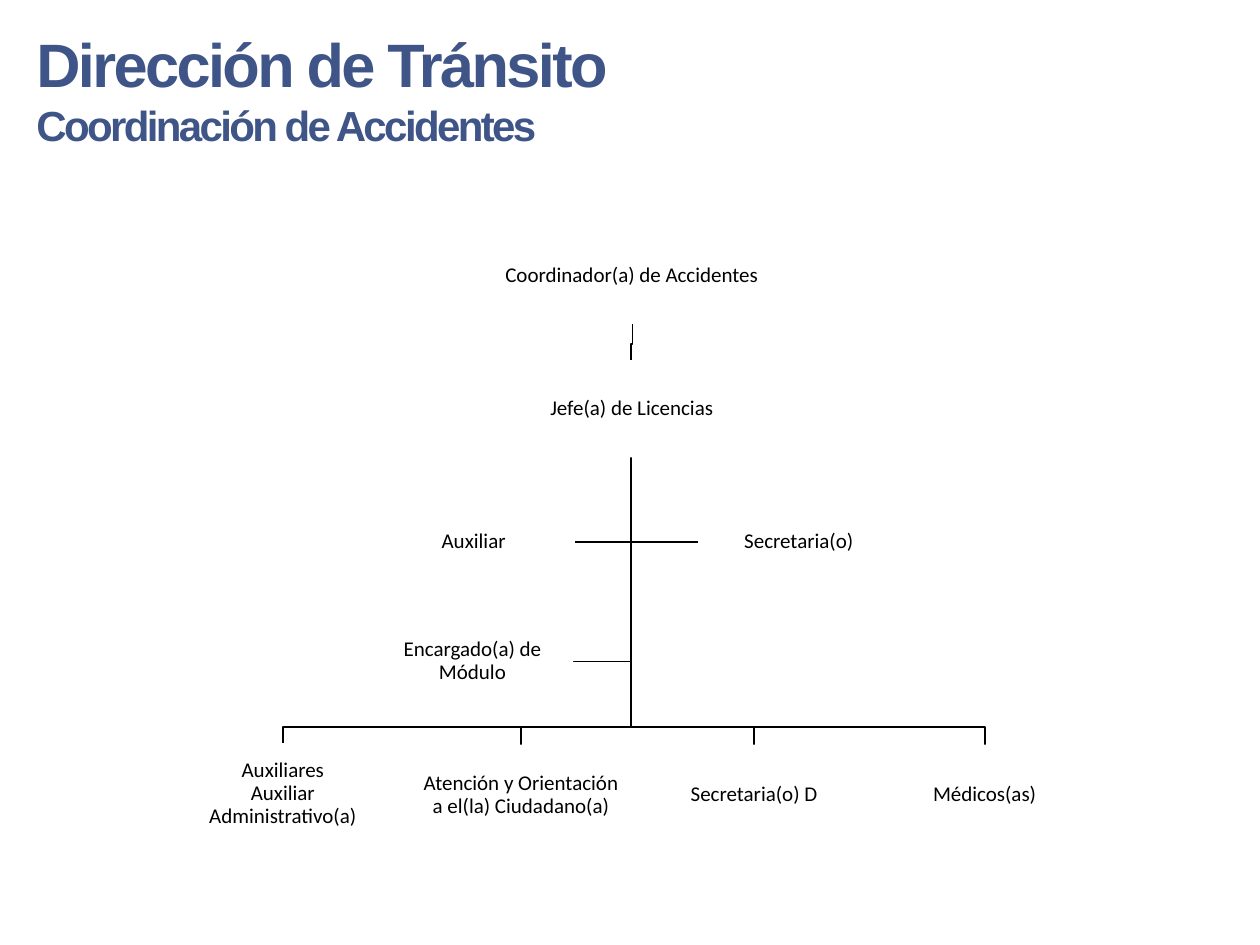
from pptx import Presentation
from pptx.dml.color import RGBColor
from pptx.enum.shapes import MSO_SHAPE
from pptx.enum.text import MSO_ANCHOR, MSO_AUTO_SIZE, PP_ALIGN
from pptx.util import Inches, Pt

RECTANGLE = MSO_SHAPE.RECTANGLE
MIDDLE = MSO_ANCHOR.MIDDLE
GROW = MSO_AUTO_SIZE.SHAPE_TO_FIT_TEXT
CENTER = PP_ALIGN.CENTER

BLUE = RGBColor(0x3F, 0x55, 0x88)
BLACK = RGBColor(0, 0, 0)
WHITE = RGBColor(0xFF, 0xFF, 0xFF)

COLUMNS, ROWS = 100, 75
TRUNK = 50.1
BRANCH_ROW = 57.7


class OrgChart:
    heading_font = "Arial"
    body_font = "Calibri"
    body_size = 12
    inset = Inches(0.01)

    def __init__(self, presentation):
        self.slide = presentation.slides.add_slide(presentation.slide_layouts[6])
        self.column = presentation.slide_width / COLUMNS
        self.row = presentation.slide_height / ROWS

    def place(self, column, row):
        return round(column * self.column), round(row * self.row)

    def heading(self, left, top, width, height, lines):
        box = self.slide.shapes.add_textbox(*self.place(left, top), *self.place(width, height))
        frame = box.text_frame
        frame.word_wrap = True
        frame.auto_size = GROW
        frame.text = "\n".join(text for text, size in lines)
        for paragraph, (text, size) in zip(frame.paragraphs, lines):
            run = paragraph.runs[0]
            run.font.name = self.heading_font
            run.font.size = Pt(size)
            run.font.bold = True
            run.font.color.rgb = BLUE
            run.font._element.set("spc", "-150")

    def position(self, left, top, width, height, text):
        box = self.slide.shapes.add_shape(
            RECTANGLE, *self.place(left, top), *self.place(width, height))
        box.shadow.inherit = False
        box.fill.solid()
        box.fill.fore_color.rgb = WHITE
        box.line.fill.background()
        frame = box.text_frame
        frame.word_wrap = True
        frame.vertical_anchor = MIDDLE
        frame.margin_left = frame.margin_right = self.inset
        frame.margin_top = frame.margin_bottom = self.inset
        frame.text = text
        for paragraph in frame.paragraphs:
            paragraph.alignment = CENTER
            paragraph.line_spacing = 0.9
            font = paragraph.runs[0].font
            font.name = self.body_font
            font.size = Pt(self.body_size)
            font.color.rgb = BLACK

    def route(self, *points):
        start, *rest = [self.place(*point) for point in points]
        builder = self.slide.shapes.build_freeform(*start)
        builder.add_line_segments(rest, close=False)
        line = builder.convert_to_shape()
        line.shadow.inherit = False
        line.fill.background()
        line.line.color.rgb = BLACK
        line.line.width = Pt(1)


def main():
    presentation = Presentation()
    presentation.slide_width = Inches(10)
    presentation.slide_height = Inches(7.5)
    chart = OrgChart(presentation)

    chart.heading(1.9, 1.6, 74.6, 10.9, [
        ("Dirección de Tránsito", 35),
        ("Coordinación de Accidentes", 24),
    ])

    lead_left, lead_width, lead_height = 38.1, 24.1, 7.7
    coordinator_top, chief_top = 18, 28.6
    chief_bottom = (TRUNK, chief_top + lead_height)
    staff_width, staff_height = 16, 7.6
    staff = [
        (29.6, 39.2, "Auxiliar"),
        (55.4, 39.2, "Secretaria(o)"),
        (29.5, 48.7, "Encargado(a) de Módulo"),
    ]
    team_width, team_height = 16.1, 8
    team = [
        (14.4, 59, "Auxiliares\nAuxiliar Administrativo(a)"),
        (33.3, 59.1, "Atención y Orientación a el(la) Ciudadano(a)"),
        (51.8, 59.1, "Secretaria(o) D"),
        (70.1, 59.1, "Médicos(as)"),
    ]

    chart.route((50.2, coordinator_top + lead_height), (50.2, 27.3),
                (TRUNK, 27.3), (TRUNK, chief_top))
    for left, top, role in staff:
        side = left if left > TRUNK else left + staff_width
        middle = top + staff_height / 2
        chart.route(chief_bottom, (TRUNK, middle), (side, middle))
    for left, top, role in team:
        center = left + team_width / 2
        chart.route(chief_bottom, (TRUNK, BRANCH_ROW), (center, BRANCH_ROW), (center, top))

    chart.position(lead_left, coordinator_top, lead_width, lead_height,
                   "Coordinador(a) de Accidentes")
    chart.position(lead_left, chief_top, lead_width, lead_height, "Jefe(a) de Licencias")
    for left, top, role in team:
        chart.position(left, top, team_width, team_height, role)
    for left, top, role in staff:
        chart.position(left, top, staff_width, staff_height, role)

    presentation.save("out.pptx")


if __name__ == "__main__":
    main()
